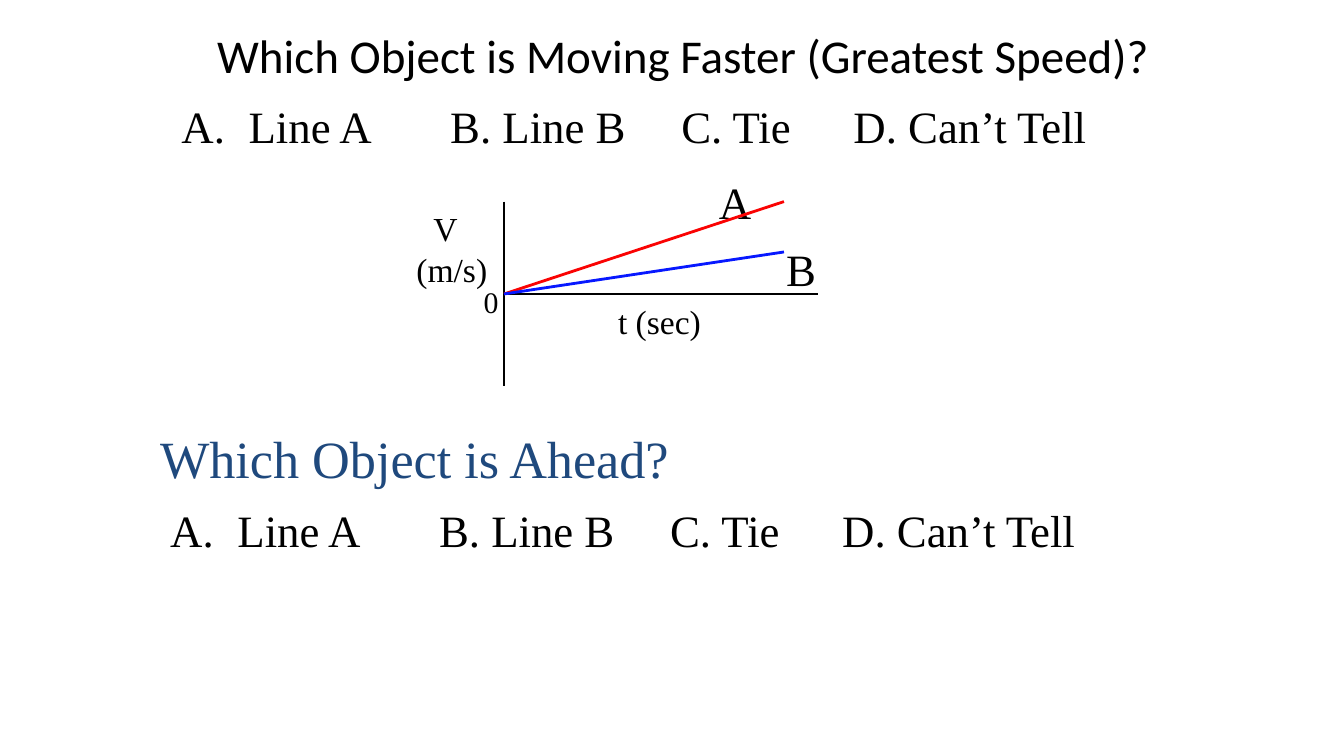
"""Build a quiz slide comparing two lines on a velocity-time graph."""
from dataclasses import dataclass

from lxml import etree
from pptx import Presentation
from pptx.dml.color import RGBColor
from pptx.enum.shapes import MSO_CONNECTOR
from pptx.enum.text import MSO_ANCHOR, MSO_AUTO_SIZE, PP_ALIGN
from pptx.oxml.ns import qn
from pptx.util import Emu, Pt

PX = 9525
SERIF = "Times New Roman"
LEFT, CENTER = PP_ALIGN.LEFT, PP_ALIGN.CENTER
TOP, MIDDLE = MSO_ANCHOR.TOP, MSO_ANCHOR.MIDDLE
NO_FIT = MSO_AUTO_SIZE.NONE
STRAIGHT = MSO_CONNECTOR.STRAIGHT
COLORS = {"ink": "000000", "heading": "1F497D", "a": "FA0303", "b": "0718FF"}

OPTIONS = "Line A\tB. Line B\tC. Tie\tD. Can’t Tell"
OPTION_INDENT = 48
OPTION_TABS = (192, 357, 480)
ORIGIN = (360, 210)


@dataclass
class Label:
    text: str
    box: tuple[int, int, int, int]
    size: int = 18
    wrap: bool = False


@dataclass
class Line:
    start: tuple[int, int]
    end: tuple[int, int]
    color: str = "ink"
    width: float = 0.75


LABELS = (
    Label("A", (504, 120, 43, 49), 24),
    Label("B", (552, 168, 41, 49), 24),
    Label("V\n(m/s)", (288, 144, 80, 68), wrap=True),
    Label("t (sec)", (432, 210, 80, 38)),
    Label("0", (336, 198, 30, 36), 16),
)
LINES = (
    Line((360, 144), (360, 276)),
    Line(ORIGIN, (584, 210)),
    Line(ORIGIN, (560, 144), "a", 1.5),
    Line(ORIGIN, (560, 180), "b", 1.5),
)


def px(n: int) -> Emu:
    return Emu(n * PX)


def place(sp, box: tuple[int, int, int, int]) -> None:
    sp.left, sp.top, sp.width, sp.height = map(px, box)


def write(sp, text: str, size: float = 24, font: str = SERIF, color: str = "ink",
          align: PP_ALIGN = LEFT, anchor: MSO_ANCHOR = TOP, wrap: bool = True) -> None:
    tf = sp.text_frame
    tf.auto_size, tf.word_wrap, tf.vertical_anchor = NO_FIT, wrap, anchor
    tf.text = text
    for p in tf.paragraphs:
        p.alignment = align
        p.space_before = Pt(0)
        for r in p.runs:
            r.font.name, r.font.size = font, Pt(size)
            r.font.color.rgb = RGBColor.from_string(COLORS[color])


def add_options(sp, box: tuple[int, int, int, int]) -> None:
    place(sp, box)
    write(sp, OPTIONS)
    pPr = sp.text_frame.paragraphs[0]._p.get_or_add_pPr()
    pPr.set("marL", str(px(OPTION_INDENT)))
    pPr.set("indent", str(px(-OPTION_INDENT)))
    etree.SubElement(pPr, qn("a:buFont"), typeface=SERIF)
    etree.SubElement(pPr, qn("a:buAutoNum"), type="alphaUcPeriod")
    tabs = etree.SubElement(pPr, qn("a:tabLst"))
    for pos in OPTION_TABS:
        etree.SubElement(tabs, qn("a:tab"), pos=str(px(pos)), algn="l")


def add_label(shapes, label: Label):
    sp = shapes.add_textbox(*map(px, label.box))
    write(sp, label.text, size=label.size, wrap=label.wrap)
    return sp


def add_line(shapes, line: Line) -> None:
    sp = shapes.add_connector(STRAIGHT, *map(px, line.start + line.end))
    sp.line.color.rgb = RGBColor.from_string(COLORS[line.color])
    sp.line.width = Pt(line.width)
    etree.SubElement(sp._element.spPr, qn("a:effectLst"))


def main() -> None:
    prs = Presentation()
    prs.slide_width, prs.slide_height = px(960), px(540)
    s = prs.slides.add_slide(prs.slide_layouts[3])
    title, speed_options, ahead_options = s.placeholders

    place(title, (80, 18, 816, 42))
    write(title, "Which Object is Moving Faster (Greatest Speed)?", size=25.2,
          font="Calibri", align=CENTER, anchor=MIDDLE)
    add_options(speed_options, (120, 66, 760, 48))

    graph = s.shapes.add_group_shape().shapes
    labels = {label.text: add_label(graph, label) for label in LABELS}
    velocity = labels["V\n(m/s)"].text_frame.paragraphs[0]
    velocity._p.get_or_add_pPr().set("marL", str(px(12)))
    for line in LINES:
        add_line(graph, line)

    heading = s.shapes.add_textbox(*map(px, (24, 306, 544, 42)))
    write(heading, "Which Object is Ahead?", size=28, color="heading",
          align=CENTER, anchor=MIDDLE)
    add_options(ahead_options, (112, 354, 760, 48))
    prs.save("out.pptx")


if __name__ == "__main__":
    main()
